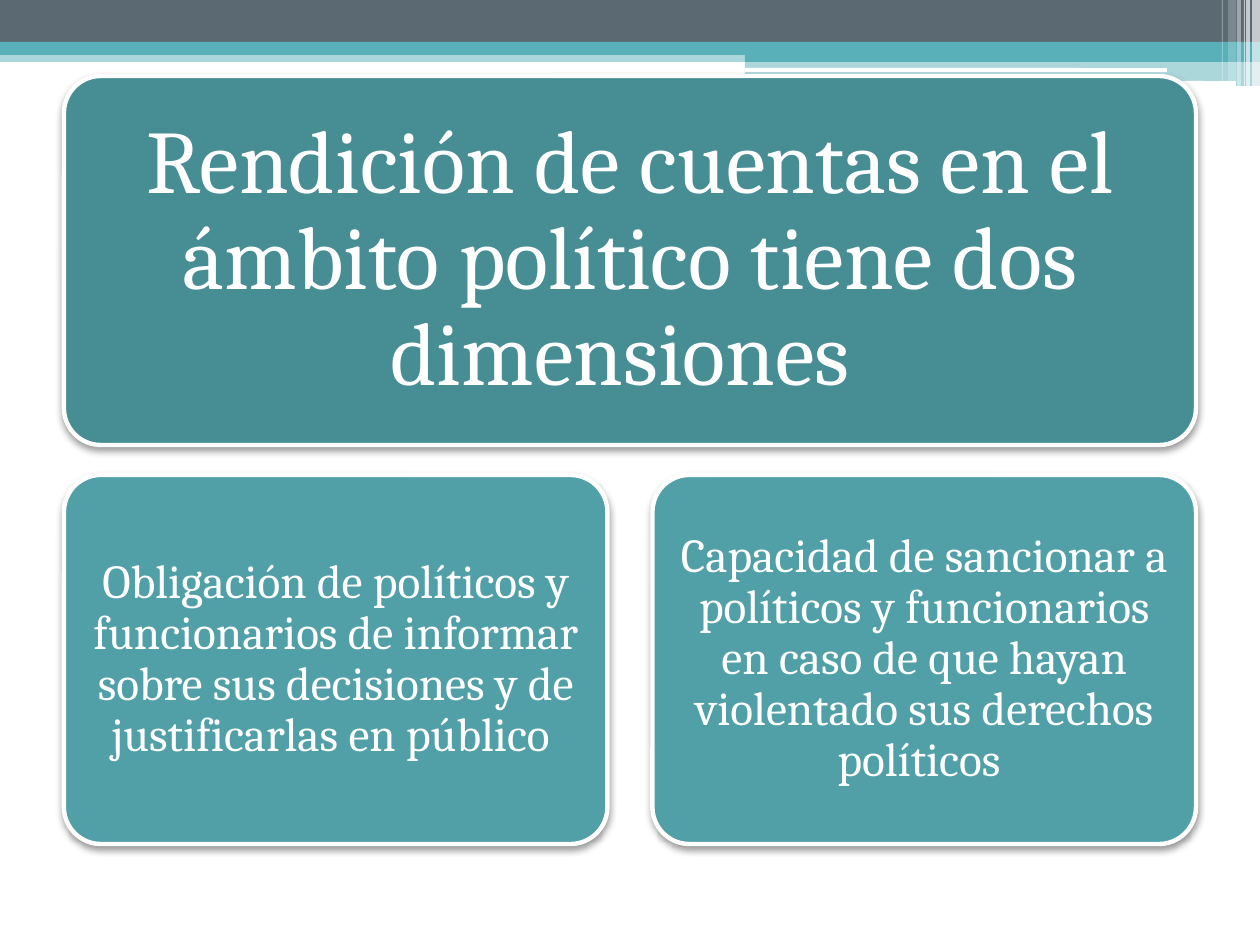
"""Build a slide on the two dimensions of political accountability."""
from lxml.etree import SubElement
from pptx import Presentation
from pptx.dml.color import RGBColor
from pptx.enum.shapes import MSO_SHAPE
from pptx.enum.text import MSO_ANCHOR, MSO_AUTO_SIZE, PP_ALIGN
from pptx.oxml.ns import qn
from pptx.util import Emu, Pt

TITLE = "Rendición de cuentas en el ámbito político tiene dos dimensiones "
DIMENSIONS = [
    "Obligación de políticos y funcionarios de informar sobre sus decisiones "
    "y de justificarlas en público ",
    "Capacidad de sancionar a políticos y funcionarios en caso de que hayan "
    "violentado sus derechos políticos ",
]

THEME = {
    "font": "Cambria", "title_size": 51, "body_size": 27, "line_width": 2.5,
    "white": "FFFFFF", "slate": "5B6973", "teal": "59B0B9",
    "title_card": "478D94", "body_card": "51A0A8", "shadow": "000000",
}

BANDS = [
    ((0, 50, 1260, 12), "teal", 50),
    ((0, 0, 1260, 42), "slate", 100),
    ((0, 42, 1260, 13), "teal", 100),
    ((745, 49, 515, 13), "teal", 100),
    ((745, 62, 515, 24), "teal", 50),
]
PILLS = [(745, 68, 422, 4), (1016, 81, 220, 5)]
STRIPES = [
    (1252, 8, 86, 65), (1246, 4, 86, 65), (1244, 1, 86, 60),
    (1237, 4, 86, 40), (1228, 8, 81, 20), (1222, 1, 81, 30),
]

LEFT, TOP, WIDTH, CARD_HEIGHT = 64, 76, 1132, 369
COLUMN_GAP, ROW_GAP = 45, 30
TITLE_INSET, BODY_INSET = 38, 14
SCALE = 914400 / 126


def px(value):
    return Emu(round(value * SCALE))


def add_block(slide, kind, box, color, opacity=100):
    shape = slide.shapes.add_shape(kind, *map(px, box))
    shape.shadow.inherit = False
    shape.fill.solid()
    shape.fill.fore_color.rgb = RGBColor.from_string(THEME[color])
    shape.line.fill.background()
    if opacity < 100:
        fill = shape.element.spPr.find(qn("a:solidFill"))
        SubElement(fill[0], qn("a:alpha"), val=str(opacity * 1000))
    return shape


def add_card(slide, box, color):
    shape = add_block(slide, MSO_SHAPE.ROUNDED_RECTANGLE, box, color)
    shape.adjustments[0] = 0.1
    shape.line.color.rgb = RGBColor.from_string(THEME["white"])
    shape.line.width = Pt(THEME["line_width"])
    effects = shape.element.spPr.find(qn("a:effectLst"))
    shadow = SubElement(effects, qn("a:outerShdw"), blurRad=str(Pt(4.1)),
                        dist=str(Pt(2)), dir="5400000", rotWithShape="0")
    tint = SubElement(shadow, qn("a:srgbClr"), val=THEME["shadow"])
    SubElement(tint, qn("a:alpha"), val="40000")
    return shape


def write_text(shape, text, size, inset):
    frame = shape.text_frame
    frame.text = text
    margins = {f"margin_{side}": px(inset) for side in ("left", "top", "right", "bottom")}
    paragraph = frame.paragraphs[0]
    formats = [
        (frame, {"word_wrap": True, "auto_size": MSO_AUTO_SIZE.NONE,
                 "vertical_anchor": MSO_ANCHOR.MIDDLE, **margins}),
        (paragraph, {"alignment": PP_ALIGN.CENTER, "line_spacing": 0.9}),
        (paragraph.runs[0].font, {"name": THEME["font"], "size": Pt(THEME[size])}),
    ]
    for target, values in formats:
        for name, value in values.items():
            setattr(target, name, value)
    paragraph.runs[0].font.color.rgb = RGBColor.from_string(THEME["white"])


def add_header(slide):
    for box, color, opacity in BANDS:
        add_block(slide, MSO_SHAPE.RECTANGLE, box, color, opacity)
    for box in PILLS:
        add_block(slide, MSO_SHAPE.ROUNDED_RECTANGLE, box, "white")
    for left, width, height, opacity in STRIPES:
        add_block(slide, MSO_SHAPE.RECTANGLE, (left, 0, width, height), "white", opacity)


def add_title(slide):
    box = (LEFT, TOP, WIDTH, CARD_HEIGHT)
    add_card(slide, box, "title_card")
    title = slide.shapes.title
    for name, value in zip(("left", "top", "width", "height"), box):
        setattr(title, name, px(value))
    write_text(title, TITLE, "title_size", TITLE_INSET)
    title.element.getparent().append(title.element)


def add_dimensions(slide):
    count = len(DIMENSIONS)
    width = (WIDTH - COLUMN_GAP * (count - 1)) / count
    top = TOP + CARD_HEIGHT + ROW_GAP
    for column, text in enumerate(DIMENSIONS):
        left = LEFT + column * (width + COLUMN_GAP)
        card = add_card(slide, (left, top, width, CARD_HEIGHT), "body_card")
        write_text(card, text, "body_size", BODY_INSET)


def main():
    presentation = Presentation()
    presentation.slide_width, presentation.slide_height = px(1260), px(945)
    slide = presentation.slides.add_slide(presentation.slide_layouts.get_by_name("Title Only"))
    add_header(slide)
    add_title(slide)
    add_dimensions(slide)
    presentation.save("out.pptx")


if __name__ == "__main__":
    main()
